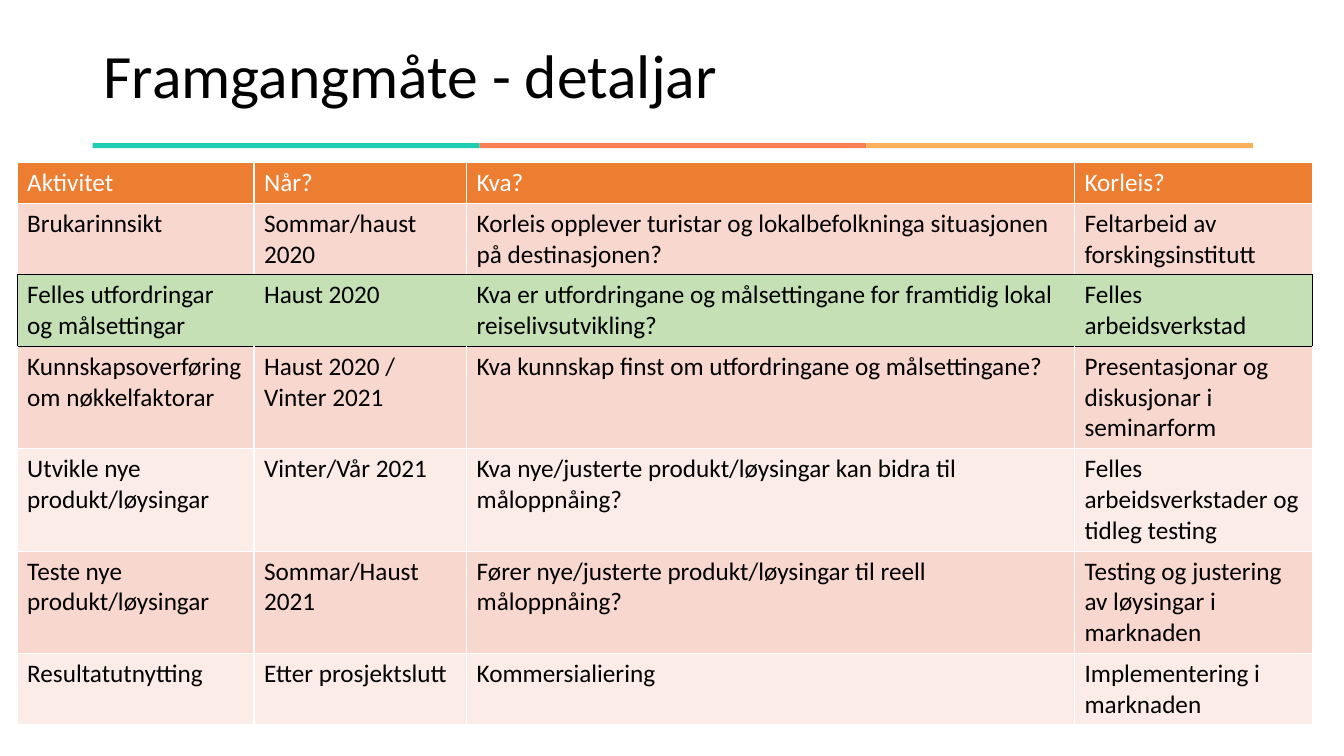
import pptx
import pptx.dml.color
import pptx.enum.shapes
import pptx.enum.text
import pptx.oxml
import pptx.oxml.ns
import pptx.util

Pt = pptx.util.Pt
FONT = "Calibri"
HEADER_FILL, GREEN_FILL = "ED7D31", "C5E0B4"
BAND_FILLS = ["FCECE8", "F8D7CE"]
STRIPE_FILLS = ["21CDB1", "F98054", "FDB05A"]
HIGHLIGHT_ROW = 2
COLUMN_WIDTHS = [169.2, 151.9, 434.2, 169.9]
LINES_PER_ROW = [1, 2, 2, 3, 3, 3, 2]
LINE_HEIGHT, CELL_PADDING = 21.97, 7.2
ROWS = [
    ["Aktivitet", "Når?", "Kva?", "Korleis?"],
    ["Brukarinnsikt", "Sommar/haust 2020",
     "Korleis opplever turistar og lokalbefolkninga situasjonen på destinasjonen?",
     "Feltarbeid av forskingsinstitutt"],
    ["Felles utfordringar og målsettingar", "Haust 2020",
     "Kva er utfordringane og målsettingane for framtidig lokal reiselivsutvikling?",
     "Felles arbeidsverkstad"],
    ["Kunnskapsoverføring om nøkkelfaktorar", "Haust 2020 / Vinter 2021",
     "Kva kunnskap finst om utfordringane og målsettingane?",
     "Presentasjonar og diskusjonar i seminarform"],
    ["Utvikle nye produkt/løysingar", "Vinter/Vår 2021",
     "Kva nye/justerte produkt/løysingar kan bidra til måloppnåing?",
     "Felles arbeidsverkstader og tidleg testing"],
    ["Teste nye produkt/løysingar", "Sommar/Haust 2021",
     "Fører nye/justerte produkt/løysingar til reell måloppnåing?",
     "Testing og justering av løysingar i marknaden"],
    ["Resultatutnytting", "Etter prosjektslutt", "Kommersialiering",
     "Implementering i marknaden"],
]


def color(value):
    """Return the colour for a hex string."""
    return pptx.dml.color.RGBColor.from_string(value)


def format_text(paragraph, size, text_color):
    """Apply the slide font to a paragraph."""
    for name, value in {"name": FONT, "size": Pt(size), "bold": False}.items():
        setattr(paragraph.font, name, value)
    paragraph.font.color.rgb = color(text_color)


def add_title(slide, left, top, width, height):
    """Place the slide title in its box."""
    frame = slide.shapes.add_textbox(Pt(left), Pt(top), Pt(width), Pt(height)).text_frame
    frame.word_wrap = True
    frame.vertical_anchor = pptx.enum.text.MSO_ANCHOR.TOP
    paragraph = frame.paragraphs[0]
    paragraph.text = "Framgangmåte - detaljar"
    paragraph.line_spacing = 0.9
    format_text(paragraph, 44, "000000")


def add_stripe(slide, left, top, width, height):
    """Divide the box into equal coloured bars."""
    bar_width = width / len(STRIPE_FILLS)
    for index, fill in enumerate(STRIPE_FILLS):
        shape = slide.shapes.add_shape(
            pptx.enum.shapes.MSO_SHAPE.RECTANGLE,
            Pt(left + index * bar_width), Pt(top), Pt(bar_width), Pt(height))
        shape.shadow.inherit = False
        shape.fill.solid()
        shape.fill.fore_color.rgb = color(fill)
        shape.line.fill.background()


def cell_borders(row, column):
    """Return the colour of each cell edge, or None for no line."""
    borders = dict.fromkeys(["lnL", "lnR", "lnT", "lnB"], "FFFFFF")
    if row == HIGHLIGHT_ROW:
        borders = {"lnL": "000000" if column == 0 else None,
                   "lnR": "000000" if column == len(COLUMN_WIDTHS) - 1 else None,
                   "lnT": "000000", "lnB": "000000"}
    elif row == HIGHLIGHT_ROW - 1:
        borders["lnB"] = "000000"
    elif row == HIGHLIGHT_ROW + 1:
        borders["lnT"] = "000000"
    return borders


def format_cell(cell, row, column):
    """Fill, letter and outline one table cell."""
    cell.text = ROWS[row][column]
    format_text(cell.text_frame.paragraphs[0], 18, "FFFFFF" if row == 0 else "000000")
    namespace = pptx.oxml.ns.nsdecls("a")
    properties = cell._tc.get_or_add_tcPr()
    for edge, line_color in cell_borders(row, column).items():
        paint = "<a:noFill/>"
        if line_color:
            paint = f'<a:solidFill><a:srgbClr val="{line_color}"/></a:solidFill>'
        properties.append(pptx.oxml.parse_xml(
            f'<a:{edge} {namespace} w="{Pt(1)}">{paint}</a:{edge}>'))
    fills = {0: HEADER_FILL, HIGHLIGHT_ROW: GREEN_FILL}
    cell.fill.solid()
    cell.fill.fore_color.rgb = color(fills.get(row, BAND_FILLS[row % 2]))


def add_activity_table(slide, left, top):
    """Place the activity table with its top left corner at the given point."""
    heights = [lines * LINE_HEIGHT + CELL_PADDING for lines in LINES_PER_ROW]
    table = slide.shapes.add_table(
        len(ROWS), len(COLUMN_WIDTHS), Pt(left), Pt(top),
        Pt(sum(COLUMN_WIDTHS)), Pt(sum(heights))).table
    for column, width in enumerate(COLUMN_WIDTHS):
        table.columns[column].width = Pt(width)
    for row, height in enumerate(heights):
        table.rows[row].height = Pt(height)
        for column in range(len(COLUMN_WIDTHS)):
            format_cell(table.cell(row, column), row, column)


def main():
    """Build and save the slide."""
    presentation = pptx.Presentation()
    presentation.slide_width, presentation.slide_height = Pt(960), Pt(540)
    slide = presentation.slides.add_slide(presentation.slide_layouts[6])
    add_stripe(slide, 66.24, 102.3, 829, 3.6)
    add_title(slide, 66.96, 28.8, 828, 73.44)
    add_activity_table(slide, 12.24, 116)
    presentation.save("out.pptx")


if __name__ == "__main__":
    main()
